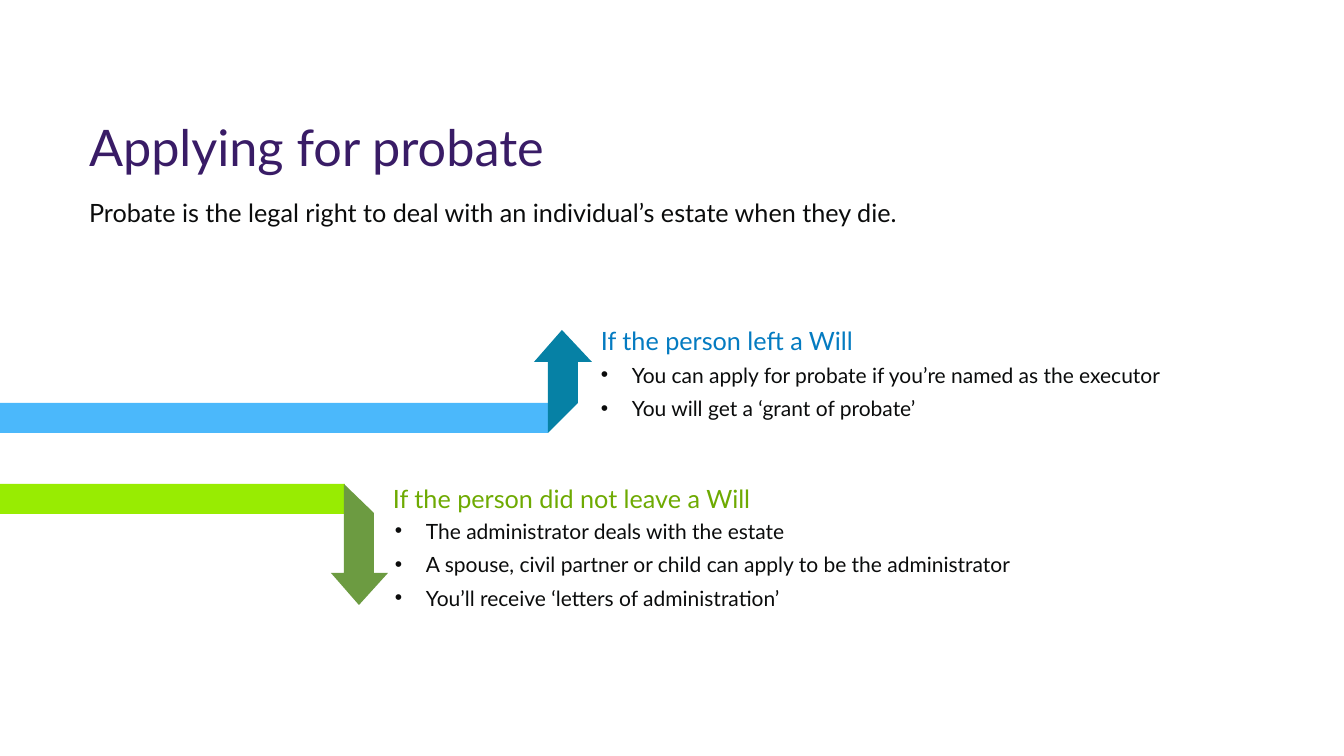
from lxml.etree import SubElement
from pptx import Presentation
from pptx.dml.color import RGBColor
from pptx.enum.shapes import MSO_SHAPE as SHAPE
from pptx.enum.text import MSO_ANCHOR as ANCHOR, MSO_AUTO_SIZE as AUTO_SIZE, PP_ALIGN as ALIGN
from pptx.oxml.ns import qn
from pptx.util import Pt

SLIDE_WIDTH, SLIDE_HEIGHT = 1344, 756
SCALE = 12192000 / SLIDE_WIDTH
FONT = "Lato"
BAR_HEIGHT = 30
BULLET_INDENT = 31
COLORS = {
    "title": "391C66",
    "text": "0B0C0C",
    "will_heading": "047BC1",
    "will_bar": "4BB8FB",
    "will_arrow": "0681A5",
    "no_will_heading": "6EAA02",
    "no_will_bar": "98EC02",
    "no_will_arrow": "6C9B41",
}


def px(length):
    """Turn a length in px into EMU."""
    return round(length * SCALE)


def place(shape, left, top, width, height):
    """Move and size a shape in px."""
    shape.left, shape.top = px(left), px(top)
    shape.width, shape.height = px(width), px(height)


def format_frame(frame, anchor, margins):
    """Set wrapping, anchor and the left, top, right and bottom margins of a text frame."""
    frame.word_wrap = True
    frame.auto_size = AUTO_SIZE.NONE
    frame.vertical_anchor = anchor
    frame.margin_left, frame.margin_top, frame.margin_right, frame.margin_bottom = map(px, margins)


def format_paragraph(paragraph, size, color):
    """Set the alignment, spacing and font of a paragraph."""
    paragraph.alignment = ALIGN.LEFT
    paragraph.space_before = Pt(0)
    paragraph.font.name = FONT
    paragraph.font.size = Pt(size)
    paragraph.font.color.rgb = RGBColor.from_string(COLORS[color])


def fill_title(title, text):
    """Write the slide title in its placeholder."""
    place(title, 89, 117, 1167, 58)
    format_frame(title.text_frame, ANCHOR.MIDDLE, (0, 0, 0, 0))
    title.text_frame.text = text
    format_paragraph(title.text_frame.paragraphs[0], 36, "title")


def add_line_of_text(slide, box, text, color, margin_left=10):
    """Add a one-line text box."""
    frame = slide.shapes.add_textbox(*map(px, box)).text_frame
    format_frame(frame, ANCHOR.TOP, (margin_left, 5, 10, 5))
    frame.text = text
    format_paragraph(frame.paragraphs[0], 18, color)


def add_bullet(paragraph):
    """Give a paragraph a hanging round bullet."""
    properties = paragraph._p.get_or_add_pPr()
    properties.set("marL", str(px(BULLET_INDENT)))
    properties.set("indent", str(-px(BULLET_INDENT)))
    SubElement(properties, qn("a:buFont"), typeface="Arial")
    SubElement(properties, qn("a:buChar"), char="•")


def fill_list(placeholder, box, items):
    """Write a bulleted list in a body placeholder."""
    place(placeholder, *box)
    frame = placeholder.text_frame
    format_frame(frame, ANCHOR.TOP, (10, 5, 10, 5))
    frame.text = "\n".join(items)
    for paragraph in frame.paragraphs:
        add_bullet(paragraph)
        format_paragraph(paragraph, 15, "text")
        paragraph.space_after = Pt(6)


def paint(shape, color):
    """Fill a shape with a flat colour, without line or shadow."""
    shape.shadow.inherit = False
    shape.fill.solid()
    shape.fill.fore_color.rgb = RGBColor.from_string(COLORS[color])
    shape.line.fill.background()


def add_bar(slide, top, width, color):
    """Add a bar that starts at the left edge of the slide."""
    bar = slide.shapes.add_shape(SHAPE.RECTANGLE, 0, px(top), px(width), px(BAR_HEIGHT))
    paint(bar, color)


def add_folded_arrow(slide, points, color):
    """Add an arrow outline through points in px."""
    builder = slide.shapes.build_freeform(*points[0], scale=SCALE)
    builder.add_line_segments(points[1:], close=True)
    paint(builder.convert_to_shape(), color)


def main():
    """Build the probate slide and save it."""
    presentation = Presentation()
    presentation.slide_width, presentation.slide_height = px(SLIDE_WIDTH), px(SLIDE_HEIGHT)
    slide = presentation.slides.add_slide(presentation.slide_layouts[3])
    title, will_list, no_will_list = slide.placeholders

    fill_title(title, "Applying for probate")
    add_line_of_text(slide, (89, 192, 882, 40),
                     "Probate is the legal right to deal with an individual’s estate when they die.",
                     "text", margin_left=0)

    add_bar(slide, 403, 548, "will_bar")
    add_folded_arrow(slide, [(548, 433), (548, 362), (534, 362), (562, 330),
                             (592, 362), (578, 362), (578, 403)], "will_arrow")
    add_line_of_text(slide, (591, 320, 510, 40), "If the person left a Will", "will_heading")
    fill_list(will_list, (591, 357, 627, 70), [
        "You can apply for probate if you’re named as the executor",
        "You will get a ‘grant of probate’",
    ])

    add_bar(slide, 484, 345, "no_will_bar")
    add_folded_arrow(slide, [(344, 484), (344, 573), (331, 573), (359, 605),
                             (388, 573), (374, 573), (374, 513)], "no_will_arrow")
    add_line_of_text(slide, (383, 478, 395, 40), "If the person did not leave a Will",
                     "no_will_heading")
    fill_list(no_will_list, (385, 513, 694, 104), [
        "The administrator deals with the estate",
        "A spouse, civil partner or child can apply to be the administrator",
        "You’ll receive ‘letters of administration’",
    ])

    presentation.save("out.pptx")


if __name__ == "__main__":
    main()
